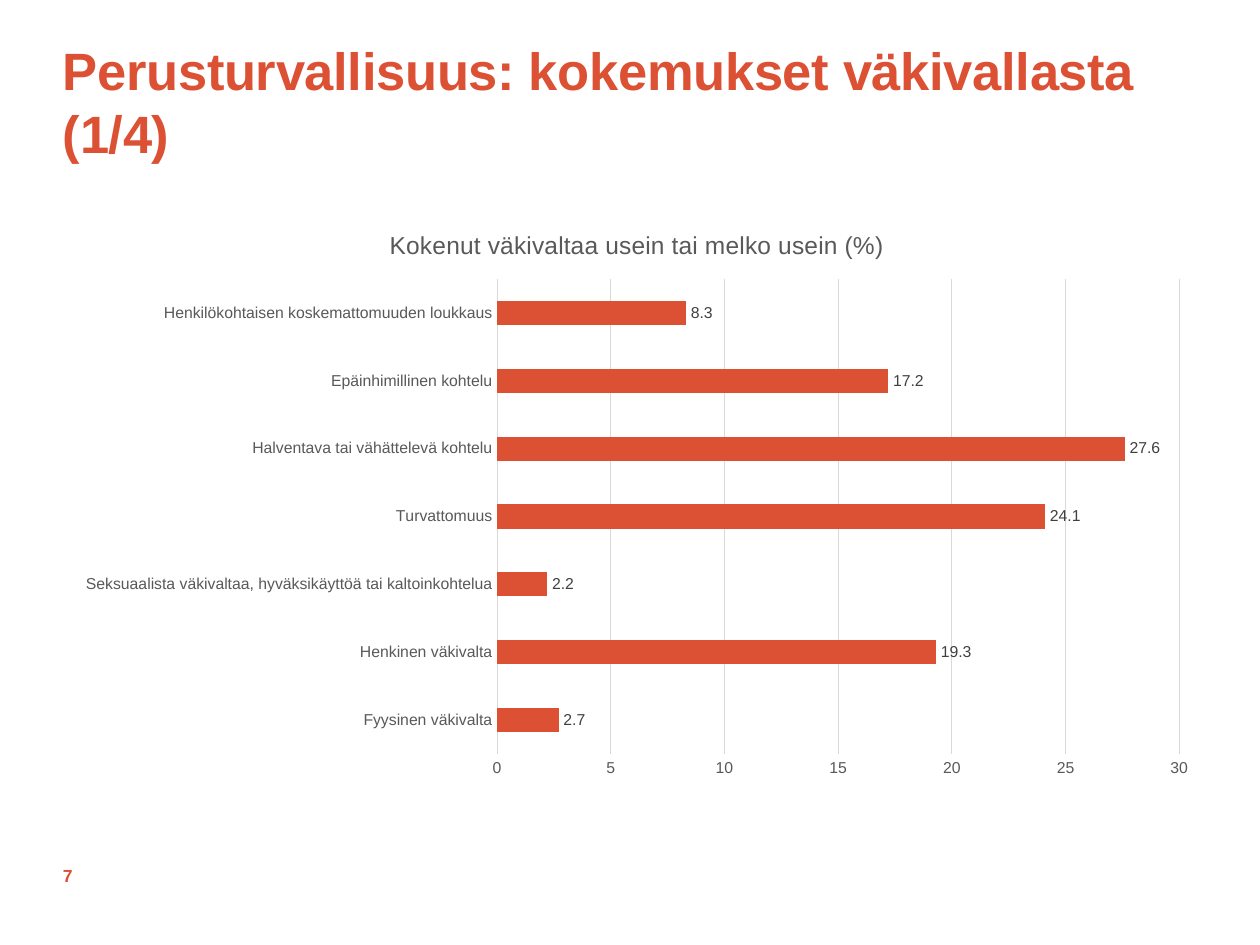
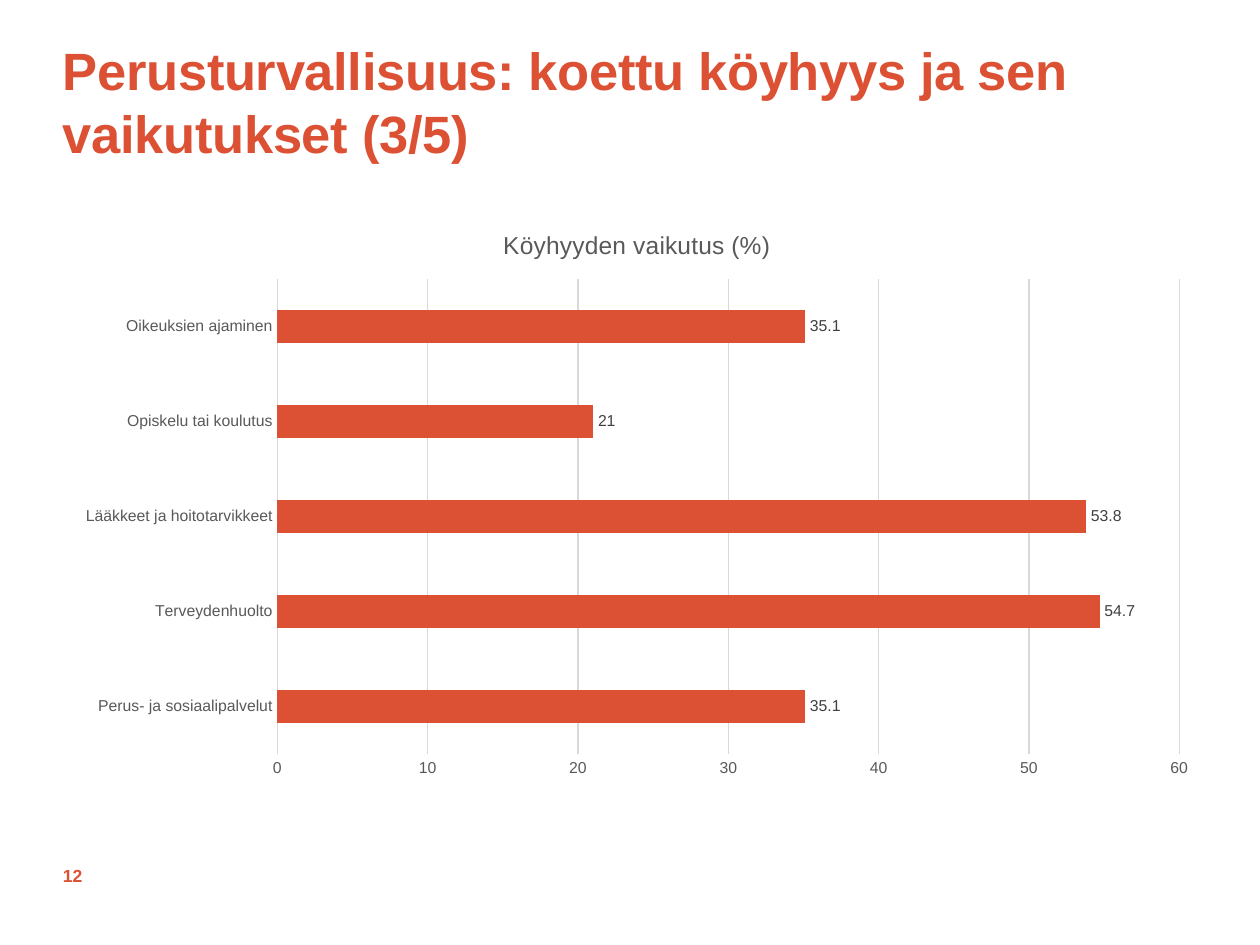
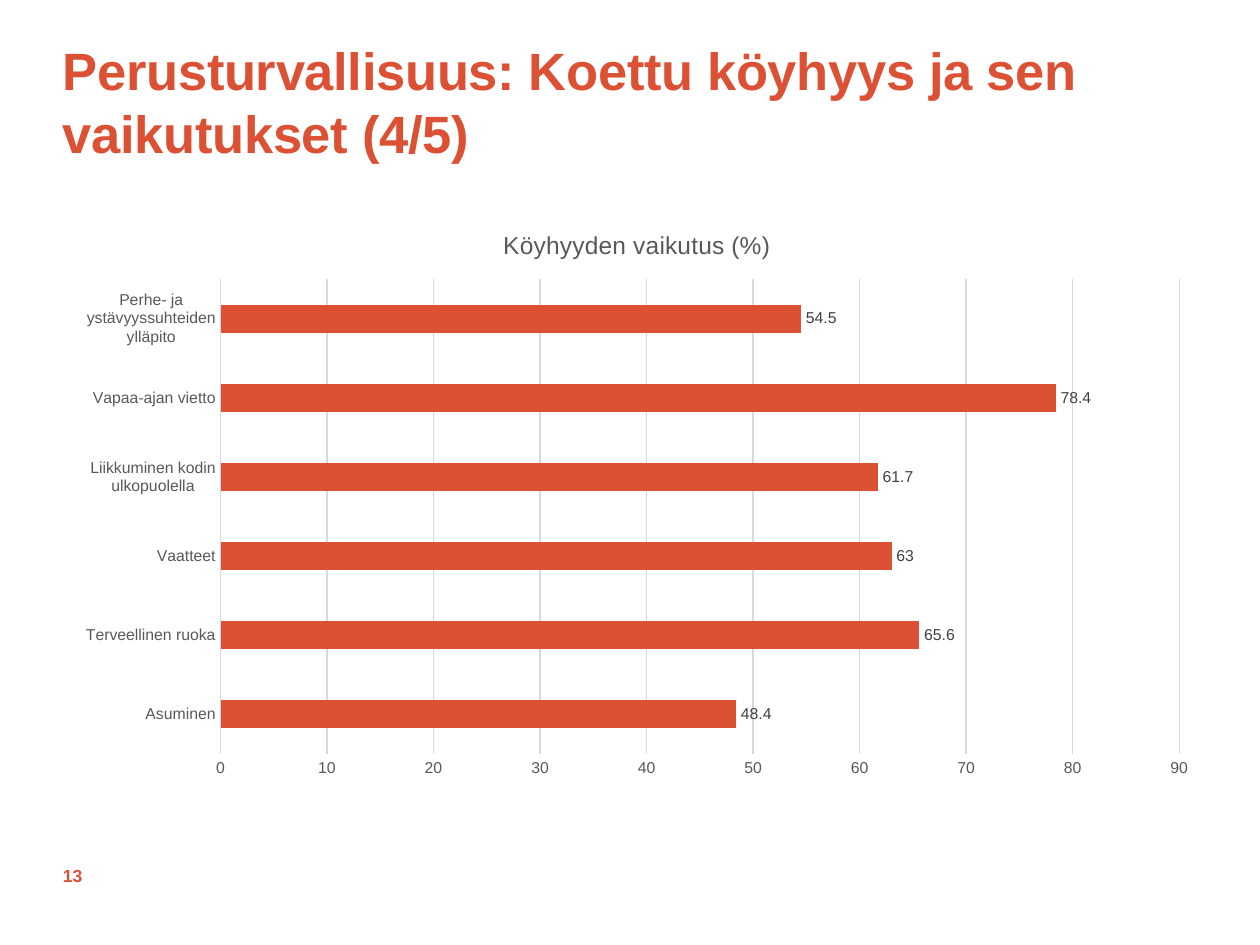
from pptx import Presentation
from pptx.chart.data import CategoryChartData
from pptx.dml.color import RGBColor
from pptx.enum.chart import XL_CHART_TYPE, XL_LABEL_POSITION, XL_TICK_MARK
from pptx.enum.text import MSO_ANCHOR
from pptx.util import Emu, Pt

BAR_CLUSTERED = XL_CHART_TYPE.BAR_CLUSTERED
OUTSIDE_END = XL_LABEL_POSITION.OUTSIDE_END
NO_TICK = XL_TICK_MARK.NONE
TOP, MIDDLE = MSO_ANCHOR.TOP, MSO_ANCHOR.MIDDLE

PX_PER_INCH = 126
FONT = "Arial"
ACCENT = "DC5034"
GRID = "D9D9D9"
AXIS_TEXT = "595959"
LABEL_TEXT = "404040"

SLIDES = [
    (
        "Perusturvallisuus: kokemukset väkivallasta (1/4)",
        7,
        "Kokenut väkivaltaa usein tai melko usein (%)",
        {
            "Fyysinen väkivalta": 2.7,
            "Henkinen väkivalta": 19.3,
            "Seksuaalista väkivaltaa, hyväksikäyttöä tai kaltoinkohtelua": 2.2,
            "Turvattomuus": 24.1,
            "Halventava tai vähättelevä kohtelu": 27.6,
            "Epäinhimillinen kohtelu": 17.2,
            "Henkilökohtaisen koskemattomuuden loukkaus": 8.3,
        },
    ),
    (
        "Perusturvallisuus: koettu köyhyys ja sen vaikutukset (3/5)",
        12,
        "Köyhyyden vaikutus (%)",
        {
            "Perus- ja sosiaalipalvelut": 35.1,
            "Terveydenhuolto": 54.7,
            "Lääkkeet ja hoitotarvikkeet": 53.8,
            "Opiskelu tai koulutus": 21,
            "Oikeuksien ajaminen": 35.1,
        },
    ),
    (
        "Perusturvallisuus: Koettu köyhyys ja sen vaikutukset (4/5)",
        13,
        "Köyhyyden vaikutus (%)",
        {
            "Asuminen": 48.4,
            "Terveellinen ruoka": 65.6,
            "Vaatteet": 63,
            "Liikkuminen kodin ulkopuolella": 61.7,
            "Vapaa-ajan vietto": 78.4,
            "Perhe- ja ystävyyssuhteiden ylläpito": 54.5,
        },
    ),
]


def px(length):
    return Emu(round(length * 914400 / PX_PER_INCH))


def color(hex_string):
    return RGBColor.from_string(hex_string)


def style_font(font, size, hex_string, bold=False):
    font.name = FONT
    font.size = Pt(size)
    font.bold = bold
    font.color.rgb = color(hex_string)


def style_line(line, hex_string):
    line.color.rgb = color(hex_string)
    line.width = Pt(0.75)


class Deck:
    """Holds the presentation and the slide being filled."""

    def __init__(self):
        self.presentation = Presentation()
        self.presentation.slide_width = px(1260)
        self.presentation.slide_height = px(945)
        self.slide = None

    def add_slide(self):
        blank = self.presentation.slide_layouts[6]
        self.slide = self.presentation.slides.add_slide(blank)

    def text(self, text, box, size, anchor):
        frame = self.slide.shapes.add_textbox(*map(px, box)).text_frame
        frame.margin_left = frame.margin_right = 0
        frame.margin_top = frame.margin_bottom = 0
        frame.word_wrap = True
        frame.vertical_anchor = anchor
        paragraph = frame.paragraphs[0]
        paragraph.text = text
        style_font(paragraph.font, size, ACCENT, bold=True)
        return paragraph

    def title(self, text):
        paragraph = self.text(text, (63, 38, 1134, 146), 30, TOP)
        paragraph.line_spacing = Pt(36)
        paragraph.runs[0].font._element.set("spc", "-20")

    def page_number(self, number):
        self.text(str(number), (63, 851, 90, 50), 10, MIDDLE)

    def bar_chart(self, heading, values):
        data = CategoryChartData()
        data.categories = list(values)
        data.add_series(heading, list(values.values()))
        box = map(px, (63, 207, 1148, 582))
        chart = self.slide.shapes.add_chart(BAR_CLUSTERED, *box, data).chart
        style_font(chart.font, 10, "000000")
        chart.has_legend = False
        chart.has_title = True
        paragraph = chart.chart_title.text_frame.paragraphs[0]
        paragraph.text = heading
        style_font(paragraph.font, 14, AXIS_TEXT)
        chart.chart_title.include_in_layout = False

        for axis in (chart.category_axis, chart.value_axis):
            axis.major_tick_mark = axis.minor_tick_mark = NO_TICK
            style_font(axis.tick_labels.font, 9, AXIS_TEXT)
        chart.category_axis.has_major_gridlines = False
        style_line(chart.category_axis.format.line, GRID)
        chart.value_axis.format.line.fill.background()
        style_line(chart.value_axis.major_gridlines.format.line, GRID)

        plot = chart.plots[0]
        plot.gap_width = 182
        plot.vary_by_categories = False
        fill = plot.series[0].format.fill
        fill.solid()
        fill.fore_color.rgb = color(ACCENT)
        plot.has_data_labels = True
        labels = plot.data_labels
        labels.show_value = True
        labels.position = OUTSIDE_END
        style_font(labels.font, 9, LABEL_TEXT)


def main():
    deck = Deck()
    for title, number, heading, values in SLIDES:
        deck.add_slide()
        deck.title(title)
        deck.page_number(number)
        deck.bar_chart(heading, values)
    deck.presentation.save("out.pptx")


if __name__ == "__main__":
    main()
